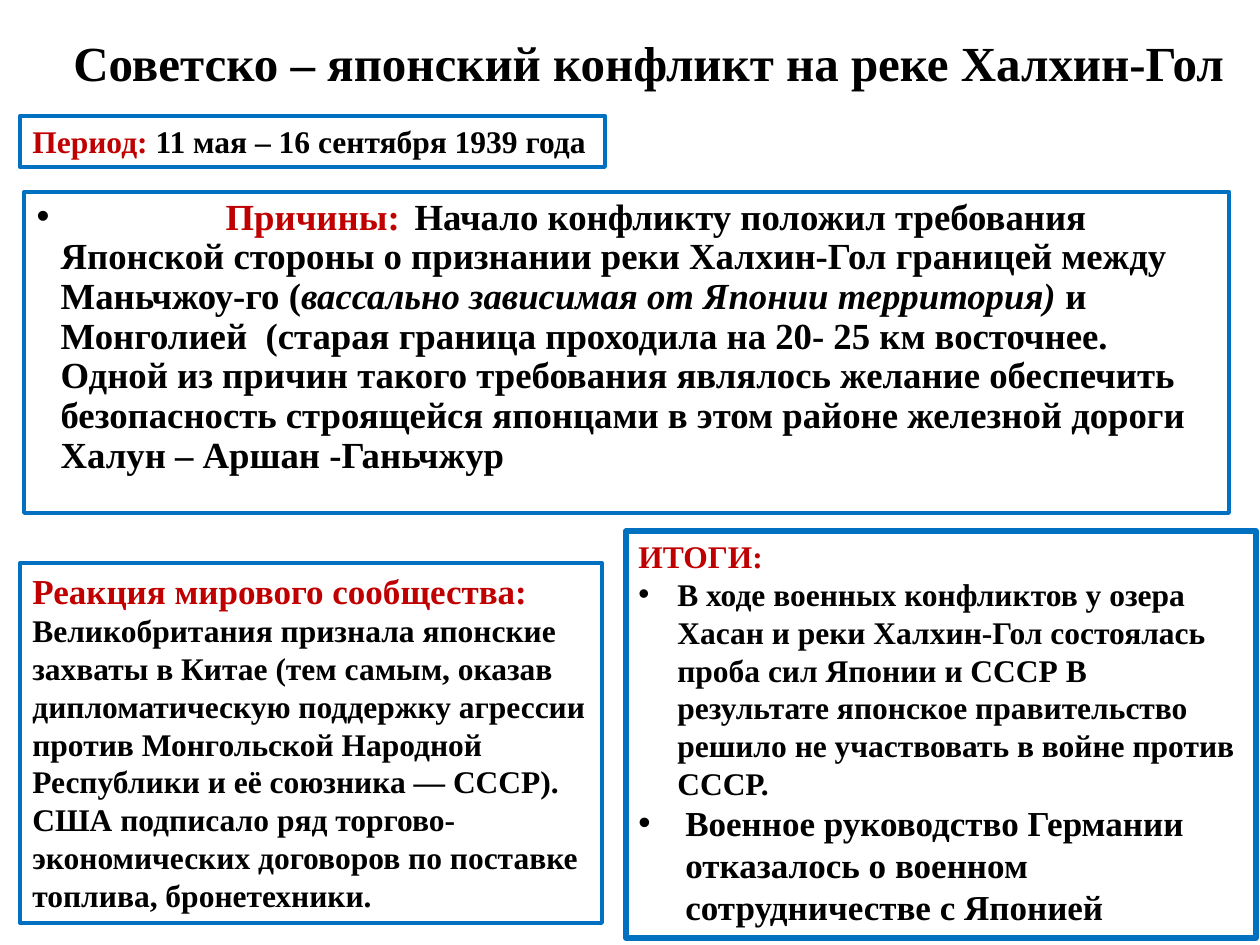
import pptx
import pptx.dml.color
import pptx.enum.text
import pptx.oxml.ns
import pptx.util
from lxml import etree

EMU_PER_INCH = 914400
PX_PER_INCH = 126
BLACK, RED, BLUE = "000000", "C00000", "0070C0"
SERIF = "Times New Roman"


def px(length):
    return pptx.util.Emu(round(length * EMU_PER_INCH / PX_PER_INCH))


def color(value):
    return pptx.dml.color.RGBColor.from_string(value)


def place(shape, box):
    for name, length in zip(("left", "top", "width", "height"), box):
        setattr(shape, name, px(length))


def add_border(shape, width):
    shape.line.color.rgb = color(BLUE)
    shape.line.width = pptx.util.Pt(width)


def format_frame(shape, **values):
    """Set text frame attributes, with top anchoring as the default."""
    values = {"vertical_anchor": pptx.enum.text.MSO_ANCHOR.TOP, "word_wrap": True,
              "auto_size": pptx.enum.text.MSO_AUTO_SIZE.SHAPE_TO_FIT_TEXT, **values}
    for name, value in values.items():
        setattr(shape.text_frame, name, value)


def add_bullet(paragraph, indent, tab_size=None):
    """Give the paragraph a round black bullet and a hanging indent in px."""
    properties = paragraph._p.get_or_add_pPr()
    properties.set("marL", str(px(indent)))
    properties.set("indent", str(px(-indent)))
    if tab_size:
        properties.set("defTabSz", str(px(tab_size)))
    qn = pptx.oxml.ns.qn
    bullet_color = etree.SubElement(properties, qn("a:buClr"))
    etree.SubElement(bullet_color, qn("a:srgbClr"), val=BLACK)
    etree.SubElement(properties, qn("a:buFont"), typeface="Arial")
    etree.SubElement(properties, qn("a:buChar"), char="•")


def add_run(paragraph, text, size, fill=BLACK, name=SERIF, italic=False):
    run = paragraph.add_run()
    run.text = text
    values = {"size": pptx.util.Pt(size), "name": name, "bold": True, "italic": italic}
    for attribute, value in values.items():
        setattr(run.font, attribute, value)
    run.font.color.rgb = color(fill)


def add_panel(slide, box, border_width=2.25, **frame_values):
    """Add a bordered text box and return its text frame."""
    shape = slide.shapes.add_textbox(*map(px, box))
    add_border(shape, border_width)
    format_frame(shape, **frame_values)
    return shape.text_frame


def fill_title(slide):
    title = slide.shapes.title
    place(title, (43, 26, 1211, 72))
    format_frame(title, word_wrap=False)
    paragraph = title.text_frame.paragraphs[0]
    paragraph.alignment = pptx.enum.text.PP_ALIGN.CENTER
    add_run(paragraph, "Советско – японский конфликт на реке Халхин-Гол", 28)


def fill_causes(slide):
    body = slide.placeholders[1]
    place(body, (24, 192, 1205, 321))
    add_border(body, 2.25)
    format_frame(body, auto_size=pptx.enum.text.MSO_AUTO_SIZE.NONE)
    paragraph = body.text_frame.paragraphs[0]
    paragraph.line_spacing = 0.9
    paragraph.space_before = pptx.util.Pt(0)
    add_bullet(paragraph, 24, tab_size=94.5)
    add_run(paragraph, "\t\t", 21, name="Calibri")
    add_run(paragraph, "Причины:", 21, RED)
    add_run(paragraph, "\tНачало конфликту положил требования Японской стороны о признании "
            "реки Халхин-Гол границей между Маньчжоу-го (", 21)
    add_run(paragraph, "вассально зависимая от Японии территория)", 21, italic=True)
    add_run(paragraph, " и Монголией  (старая граница проходила на 20- 25 км восточнее. "
            "Одной из причин такого требования являлось желание обеспечить безопасность "
            "строящейся японцами в этом районе железной дороги Халун – Аршан -Ганьчжур", 21)


def add_period(slide):
    frame = add_panel(slide, (20, 116, 585, 51), word_wrap=False)
    add_run(frame.paragraphs[0], "Период: ", 18, RED)
    add_run(frame.paragraphs[0], "11 мая – 16 сентября 1939 года", 18)


def add_reaction(slide):
    frame = add_panel(slide, (20, 563, 582, 360))
    add_run(frame.paragraphs[0], "Реакция мирового сообщества: ", 20, RED)
    add_run(frame.paragraphs[0], "Великобритания признала японские захваты в Китае (тем самым, "
            "оказав дипломатическую поддержку агрессии против Монгольской Народной "
            "Республики и её союзника — СССР).", 18)
    add_run(frame.add_paragraph(), "США подписало ряд торгово-экономических договоров "
            "по поставке топлива, бронетехники.", 18)


def add_results(slide):
    frame = add_panel(slide, (626, 531, 630, 407), border_width=3)
    add_run(frame.paragraphs[0], "ИТОГИ:", 18, RED)
    results = (
        (39, 18, "В ходе военных конфликтов у озера Хасан и реки Халхин-Гол состоялась "
                 "проба сил Японии и СССР В результате японское правительство решило "
                 "не участвовать в войне против СССР."),
        (47, 20, "Военное руководство Германии отказалось о военном сотрудничестве с Японией"),
    )
    for indent, size, text in results:
        paragraph = frame.add_paragraph()
        add_bullet(paragraph, indent)
        add_run(paragraph, text, size)


def main():
    presentation = pptx.Presentation()
    presentation.slide_width = px(1260)
    presentation.slide_height = px(945)
    slide = presentation.slides.add_slide(presentation.slide_layouts[1])
    fill_title(slide)
    fill_causes(slide)
    add_period(slide)
    add_reaction(slide)
    add_results(slide)
    presentation.save("out.pptx")


if __name__ == "__main__":
    main()
